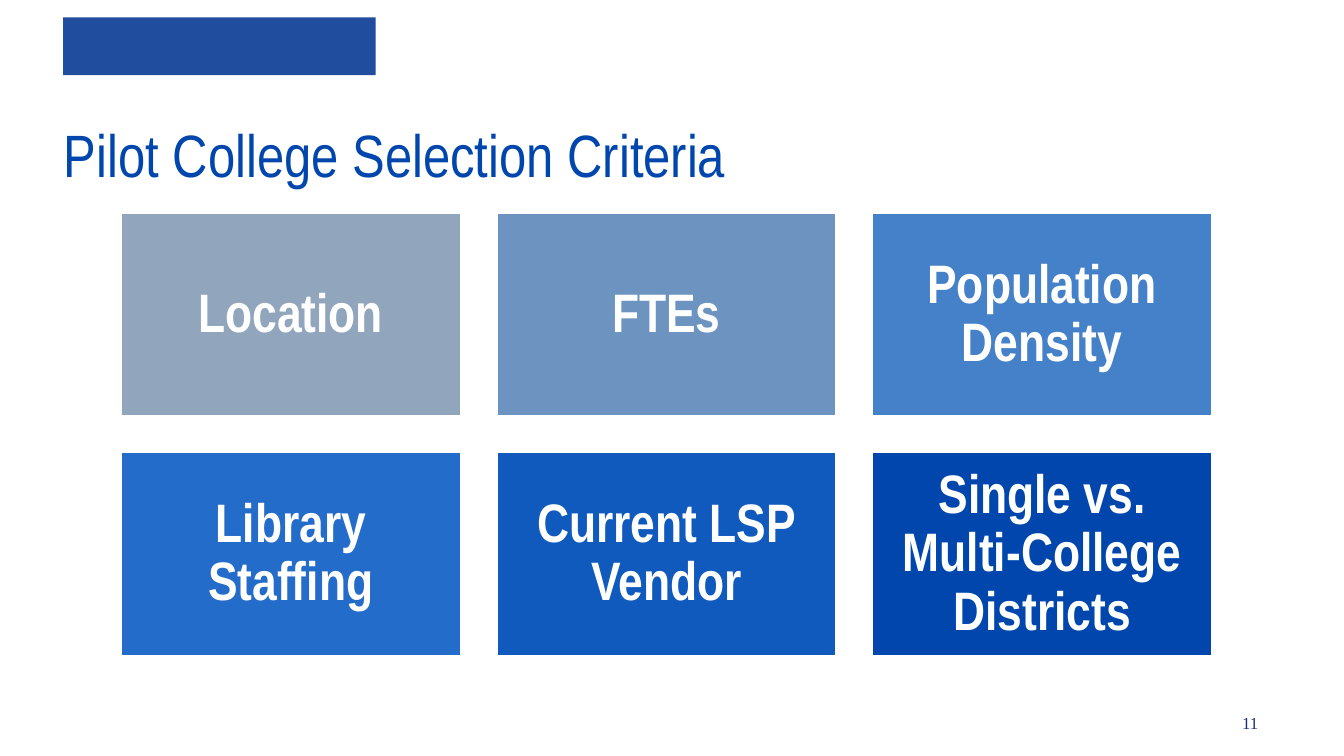
from pptx import Presentation
from pptx import util as u
from pptx.dml import color
from pptx.enum import shapes, text

PX = 4572  # EMU per px, 200 px to the inch
BLUE, WHITE = "0046AD", "FFFFFF"
CRITERIA = [
    ("Location", "91A6BC"),
    ("FTEs", "6D94C0"),
    ("Population Density", "4581C8"),
    ("Library Staffing", "246CC9"),
    ("Current LSP Vendor", "1059BD"),
    ("Single vs. Multi-College Districts", BLUE),
]


def px(length):
    return u.Emu(length * PX)


def rgb(value):
    return color.RGBColor.from_string(value)


def set_font(para, name, size, hue, bold=False):
    para.font.name = name
    para.font.size = u.Pt(size)
    para.font.color.rgb = rgb(hue)
    para.font.bold = bold


def add_block(parent, box, fill, line=None):
    block = parent.add_shape(shapes.MSO_SHAPE.RECTANGLE, *map(px, box))
    block.shadow.inherit = False
    block.fill.solid()
    block.fill.fore_color.rgb = rgb(fill)
    if line:
        block.line.color.rgb = rgb(line)
        block.line.width = u.Pt(2)
    else:
        block.line.fill.background()
    return block


def add_title(page, box, words):
    title = page.shapes.title
    title.left, title.top, title.width, title.height = map(px, box)
    frame = title.text_frame
    frame.text = words
    frame.word_wrap = True
    frame.auto_size = text.MSO_AUTO_SIZE.NONE
    frame.vertical_anchor = text.MSO_ANCHOR.TOP
    para = frame.paragraphs[0]
    para.alignment = text.PP_ALIGN.LEFT
    set_font(para, "Arial Narrow", 32, BLUE)


def add_criteria_grid(page, box, columns=3, gap=51):
    """Tiles fill the box row by row, with equal gaps both ways."""
    left, top, width, height = box
    rows = len(CRITERIA) // columns
    tile_width = (width - gap * (columns - 1)) // columns
    tile_height = (height - gap * (rows - 1)) // rows
    grid = page.shapes.add_group_shape()
    for index, (label, fill) in enumerate(CRITERIA):
        row, column = divmod(index, columns)
        place = (left + column * (tile_width + gap),
                 top + row * (tile_height + gap), tile_width, tile_height)
        frame = add_block(grid.shapes, place, fill, WHITE).text_frame
        frame.word_wrap = True
        frame.vertical_anchor = text.MSO_ANCHOR.MIDDLE
        frame.margin_left = frame.margin_right = px(24)
        frame.margin_top = frame.margin_bottom = px(24)
        frame.text = label
        para = frame.paragraphs[0]
        para.alignment = text.PP_ALIGN.CENTER
        para.line_spacing = 0.9
        set_font(para, "Arial Narrow", 29, WHITE, bold=True)


def add_page_number(page, box, number):
    frame = page.shapes.add_textbox(*map(px, box)).text_frame
    frame.word_wrap = True
    frame.text = str(number)
    para = frame.paragraphs[0]
    para.alignment = text.PP_ALIGN.RIGHT
    set_font(para, "Times New Roman", 9, "1B3075")


def main():
    deck = Presentation()
    deck.slide_width, deck.slide_height = px(2000), px(1125)
    page = deck.slides.add_slide(deck.slide_layouts[5])  # Title Only

    # Header band and title
    add_block(page.shapes, (94, 26, 465, 86), "204D9E")
    add_title(page, (75, 166, 1678, 236), "Pilot College Selection Criteria")

    # Criteria tiles
    add_criteria_grid(page, (179, 316, 1626, 661))

    # Footer
    add_page_number(page, (1594, 1051, 298, 50), 11)

    deck.save("out.pptx")


if __name__ == "__main__":
    main()
